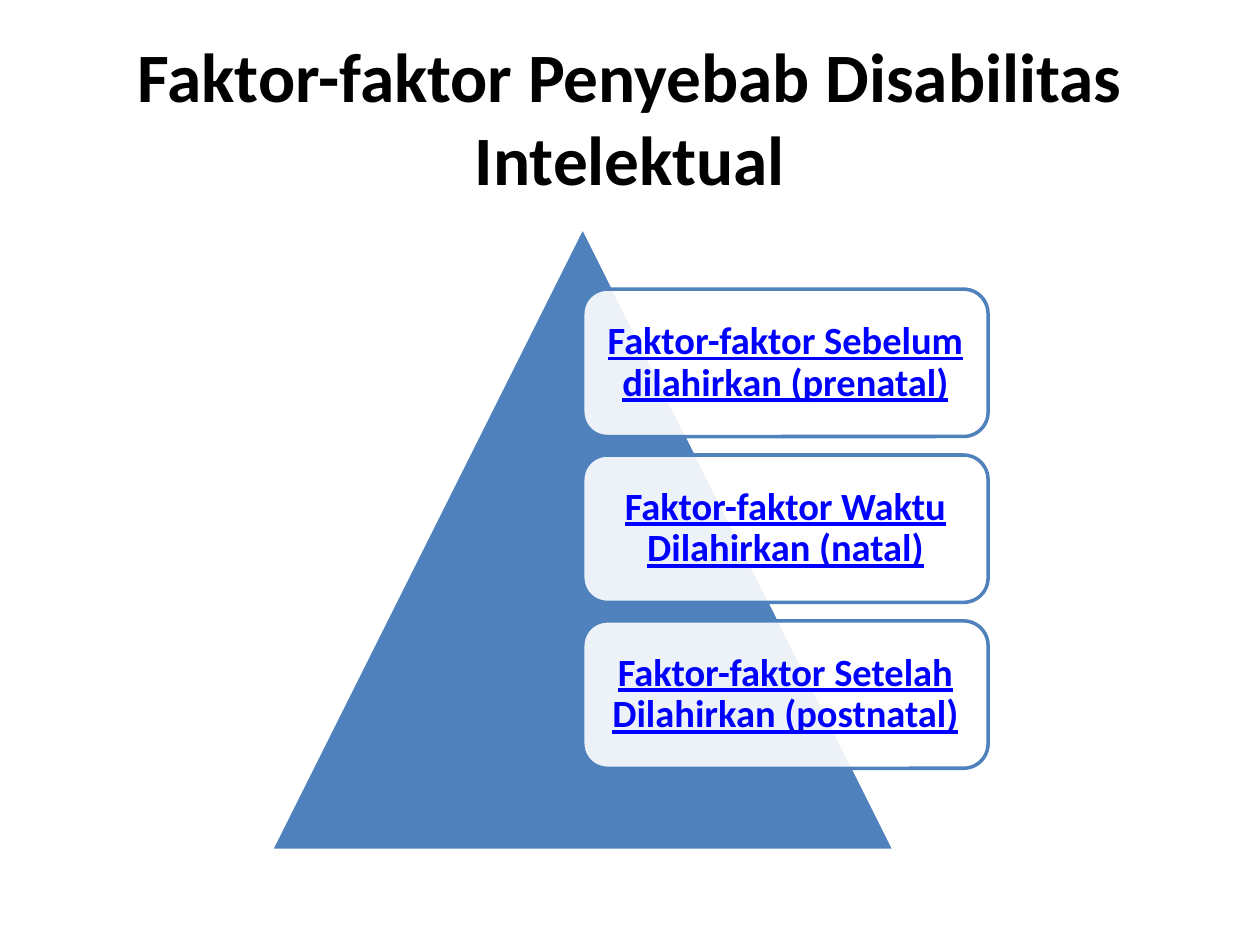
"""Build a slide on the causes of intellectual disability."""
from lxml import etree
from pptx import Presentation
from pptx.dml.color import RGBColor
from pptx.enum.shapes import MSO_SHAPE
from pptx.enum.text import MSO_ANCHOR, PP_ALIGN
from pptx.oxml.ns import qn
from pptx.util import Inches, Pt

TRIANGLE = MSO_SHAPE.ISOSCELES_TRIANGLE
ROUND = MSO_SHAPE.ROUNDED_RECTANGLE
MIDDLE = MSO_ANCHOR.MIDDLE
CENTER = PP_ALIGN.CENTER

THEME = {
    "font": "Calibri",
    "title": 39.6,
    "label": 22,
    "line": 2,
    "black": RGBColor(0, 0, 0),
    "white": RGBColor(255, 255, 255),
    "blue": RGBColor(0x4F, 0x81, 0xBD),
    "link": RGBColor(0, 0, 255),
}
LABELS = [
    "Faktor-faktor Sebelum dilahirkan (prenatal)",
    "Faktor-faktor Waktu Dilahirkan (natal)",
    "Faktor-faktor Setelah Dilahirkan (postnatal)",
]
SIDE = 4.95
LEFT, TOP = 2.15, 1.8
CARD_W, CARD_H = SIDE * 0.65, SIDE * 0.2364
PITCH = CARD_H * 1.125


def write(frame, text, size, color):
    frame.word_wrap = True
    frame.vertical_anchor = MIDDLE
    para = frame.paragraphs[0]
    para.alignment = CENTER
    run = para.add_run()
    run.text = text
    run.font.name = THEME["font"]
    run.font.size = Pt(THEME[size])
    run.font.bold = True
    run.font.color.rgb = THEME[color]
    return para, run


def draw(kind, x, y, w, h, fill, line):
    shape = slide.shapes.add_shape(kind, Inches(x), Inches(y), Inches(w), Inches(h))
    shape.shadow.inherit = False
    shape.fill.solid()
    shape.fill.fore_color.rgb = THEME[fill]
    shape.line.color.rgb = THEME[line]
    shape.line.width = Pt(THEME["line"])
    return shape


deck = Presentation()
deck.slide_width, deck.slide_height = Inches(10), Inches(7.5)
slide = deck.slides.add_slide(deck.slide_layouts[5])

title = slide.shapes.title
title.left, title.top = Inches(0.5), Inches(0.3)
title.width, title.height = Inches(9), Inches(1.25)
write(title.text_frame, "Faktor-faktor Penyebab Disabilitas Intelektual", "title", "black")

draw(TRIANGLE, LEFT, TOP, SIDE, SIDE, "blue", "white")

for row, label in enumerate(LABELS):
    x, y = LEFT + SIDE / 2, TOP + SIDE / 10 + row * PITCH
    card = draw(ROUND, x, y, CARD_W, CARD_H, "white", "blue")
    tint = card.fill._xPr.find(qn("a:solidFill"))[0]
    etree.SubElement(tint, qn("a:alpha"), val="90000")
    frame = card.text_frame
    frame.margin_left = frame.margin_right = Inches(0.09)
    frame.margin_top = frame.margin_bottom = Inches(0.09)
    para, run = write(frame, label, "label", "link")
    para.line_spacing = 0.9
    run.font.underline = True

deck.save("out.pptx")
